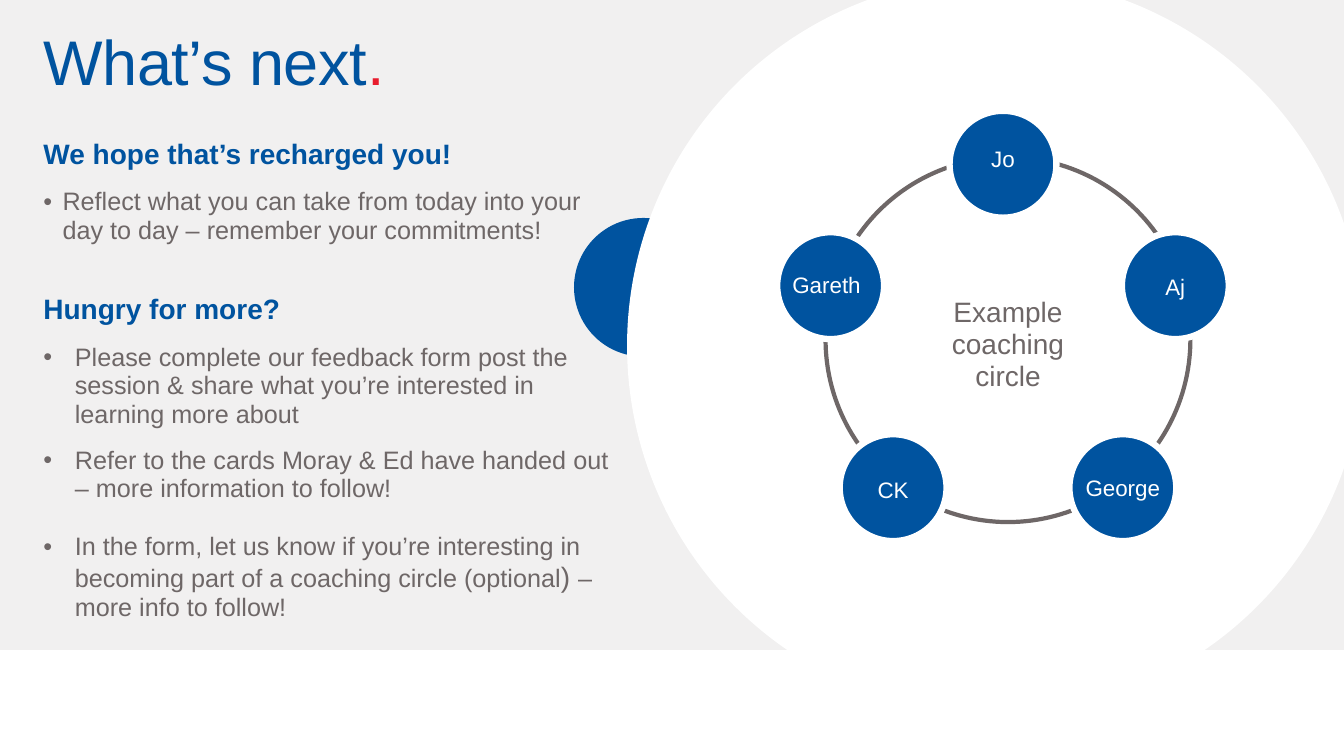
from dataclasses import dataclass

from lxml import etree
from pptx import Presentation
from pptx.dml.color import RGBColor
from pptx.enum.shapes import MSO_SHAPE
from pptx.enum.text import MSO_ANCHOR, PP_ALIGN
from pptx.oxml.ns import qn
from pptx.util import Pt

OVAL, RECT = MSO_SHAPE.OVAL, MSO_SHAPE.RECTANGLE
LEFT, CENTER = PP_ALIGN.LEFT, PP_ALIGN.CENTER
TOP, MIDDLE = MSO_ANCHOR.TOP, MSO_ANCHOR.MIDDLE


@dataclass(frozen=True)
class Theme:
    font: str = "Arial"
    back: RGBColor = RGBColor(0xF1, 0xF0, 0xF0)
    white: RGBColor = RGBColor(0xFF, 0xFF, 0xFF)
    blue: RGBColor = RGBColor(0x00, 0x53, 0x9F)
    red: RGBColor = RGBColor(0xE8, 0x1C, 0x2D)
    grey: RGBColor = RGBColor(0x6E, 0x67, 0x67)
    title: int = 45
    heading: int = 20
    body: int = 18
    label: int = 16


T = Theme()
W, H = 960, 540


def add_shape(kind, box, fill=None, line=None, width=0):
    sp = s.shapes.add_shape(kind, *map(Pt, box))
    sp.shadow.inherit = False
    if fill is None:
        sp.fill.background()
    else:
        sp.fill.solid()
        sp.fill.fore_color.rgb = fill
    if line is None:
        sp.line.fill.background()
    else:
        sp.line.color.rgb = line
        sp.line.width = Pt(width)


def add_text(box, paragraphs, spacing, align=LEFT, anchor=TOP, inset=0):
    """Each paragraph is (space before, bullet indent, runs of text, size, colour, bold)."""
    tf = s.shapes.add_textbox(*map(Pt, box)).text_frame
    tf.word_wrap = True
    tf.vertical_anchor = anchor
    tf.margin_left = tf.margin_top = tf.margin_right = tf.margin_bottom = Pt(inset)
    for i, (before, indent, runs) in enumerate(paragraphs):
        p = tf.add_paragraph() if i else tf.paragraphs[0]
        p.alignment = align
        p.line_spacing = spacing
        if before:
            p.space_before = Pt(before)
        if indent:
            pPr = p._p.get_or_add_pPr()
            pPr.set("marL", str(Pt(indent)))
            pPr.set("indent", str(-Pt(indent)))
            clr = etree.SubElement(pPr, qn("a:buClr"))
            etree.SubElement(clr, qn("a:srgbClr")).set("val", str(T.grey))
            etree.SubElement(pPr, qn("a:buFont")).set("typeface", T.font)
            etree.SubElement(pPr, qn("a:buChar")).set("char", "•")
        for text, size, color, bold in runs:
            r = p.add_run()
            r.text = text
            r.font.name, r.font.size, r.font.bold = T.font, Pt(size), bold
            r.font.color.rgb = color
    return tf


prs = Presentation()
prs.slide_width, prs.slide_height = Pt(W), Pt(H)
s = prs.slides.add_slide(prs.slide_layouts[6])
s.background.fill.solid()
s.background.fill.fore_color.rgb = T.back

# Blue disc tucked behind the large white circle, then the footer band
add_shape(OVAL, (410, 155.7, 99, 99), T.blue)
add_shape(OVAL, (447.9, -16.5, 527, 527), T.white)
add_shape(RECT, (0, 464.4, W, H - 464.4), T.white)

# Title
tf = add_text((31, 22.3, 496, 52), [
    (0, 0, [("What’s next", T.title, T.blue, False), (".", T.title, T.red, False)]),
], 0.9)
for r in tf.paragraphs[0].runs:
    r._r.get_or_add_rPr().set("spc", "-30")

# Body text
add_text((31, 99.4, 405.4, 326), [
    (0, 0, [("We hope that’s recharged you!", T.heading, T.blue, True)]),
    (12, 13.7, [("Reflect what you can take from today into your day to day – "
                 "remember your commitments!", T.body, T.grey, False)]),
    (35, 0, [("Hungry for more?", T.heading, T.blue, True)]),
    (12, 22.5, [("Please complete our feedback form post the session & share what "
                 "you’re interested in learning more about", T.body, T.grey, False)]),
    (12, 22.5, [("Refer to the cards Moray & Ed have handed out – more information "
                 "to follow!", T.body, T.grey, False)]),
    (21, 22.5, [("In the form, let us know if you’re interesting in becoming part of a "
                 "coaching circle (optional", T.body, T.grey, False),
                (") ", T.heading, T.grey, False),
                ("– more info to follow!", T.body, T.grey, False)]),
], 0.95)

# Coaching circle: caption and ring
add_text((661, 212.4, 118, 30), [
    (0, 0, [("Example coaching circle", T.heading, T.grey, False)]),
], 0.95, CENTER)
add_shape(OVAL, (589.7, 112.3, 260.6, 260.6), line=T.grey, width=3)

# People on the ring: name, disc left and top, label left and top
people = [
    ("Jo", 678.3, 79.2, 675.4, 98.4),
    ("Aj", 801.4, 165.9, 798.5, 190),
    ("George", 763.9, 310.2, 761, 333.6),
    ("CK", 599.8, 310.2, 596.9, 335.2),
    ("Gareth", 555.2, 165.9, 549.4, 188.6),
]
disc = 76.3
for _, x, y, _, _ in people:
    add_shape(OVAL, (x, y, disc, disc), T.blue, T.white, 4.5)
for name, _, _, x, y in people:
    add_text((x, y, 82, 31.7), [(0, 0, [(name, T.label, T.white, False)])],
             0.9, CENTER, MIDDLE, 5)

prs.save("out.pptx")
